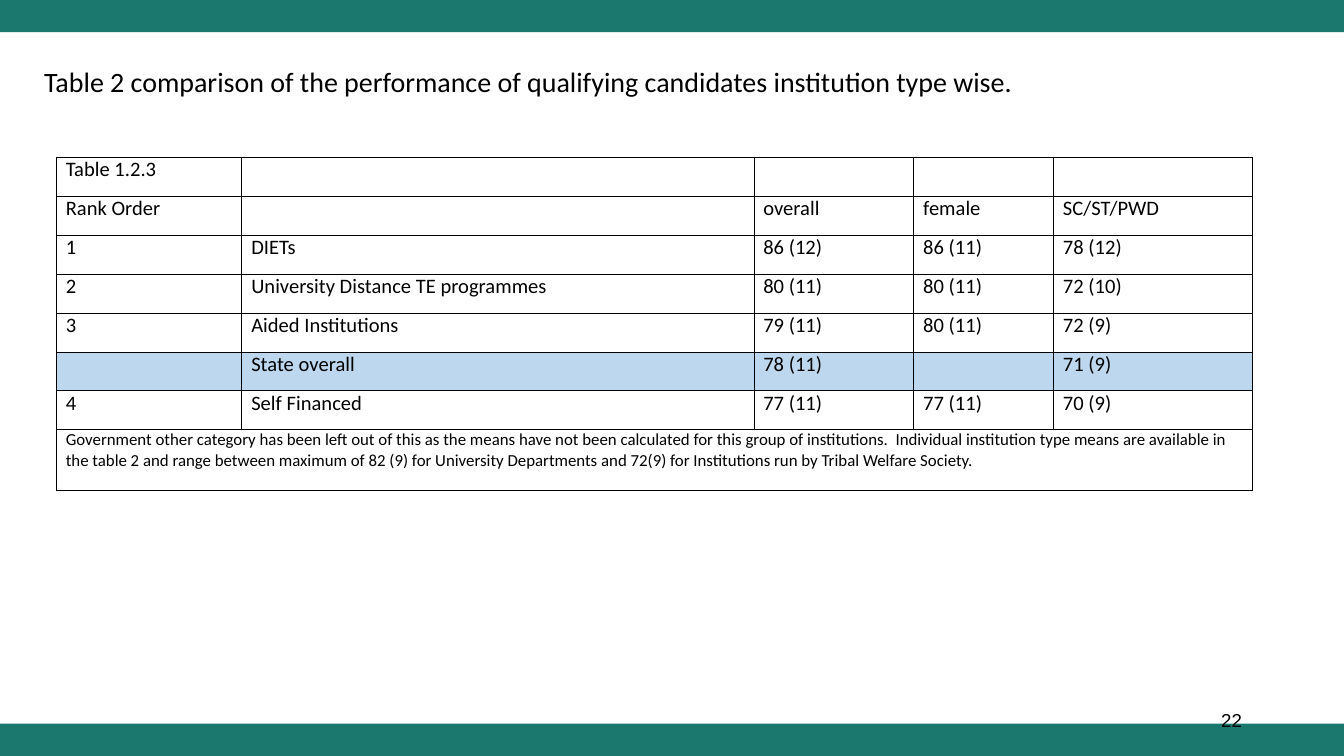
import pptx
import pptx.util
import pptx.dml.color
import pptx.enum.shapes
import pptx.enum.text
import pptx.oxml.ns
import lxml.etree

WIDTH = 10
HEIGHT = WIDTH * 9 / 16
BAND_HEIGHT = 0.24
COLUMNS = [1.38, 3.81, 1.19, 1.04, 1.48]
ROW_HEIGHT, NOTE_HEIGHT = 0.29, 0.45
COLORS = {"band": "1B786E", "text": "000000", "line": "000000", "highlight": "BDD7EE"}

TITLE = "Table 2 comparison of the performance of qualifying candidates institution type wise."
ROWS = [
    ["Table 1.2.3", "", "", "", ""],
    ["Rank Order", "", "overall", "female", "SC/ST/PWD"],
    ["1", "DIETs", "86 (12)", "86 (11)", "78 (12)"],
    ["2", "University Distance TE programmes", "80 (11)", "80 (11)", "72 (10)"],
    ["3", "Aided Institutions", "79 (11)", "80 (11)", "72 (9)"],
    ["", "State overall", "78 (11)", "", "71 (9)"],
    ["4", "Self Financed", "77 (11)", "77 (11)", "70 (9)"],
]
HIGHLIGHT_ROW = 5
NOTE = (
    "Government other category has been left out of this as the means have not been "
    "calculated for this group of institutions.  Individual institution type means are "
    "available in the table 2 and range between maximum of 82 (9) for University "
    "Departments and 72(9) for Institutions run by Tribal Welfare Society."
)


def color(name):
    return pptx.dml.color.RGBColor.from_string(COLORS[name])


def inches(box):
    return [pptx.util.Inches(length) for length in box]


def write(para, text, size=11, font="Calibri", align=None):
    if align is not None:
        para.alignment = align
    if not text:
        # An empty paragraph takes its line height from its end mark.
        end_mark = lxml.etree.SubElement(para._p, pptx.oxml.ns.qn("a:endParaRPr"))
        end_mark.set("sz", str(size * 100))
        return
    span = para.add_run()
    span.text = text
    span.font.size = pptx.util.Pt(size)
    span.font.name = font
    span.font.color.rgb = color("text")


def set_margins(target, across, down):
    target.margin_left = target.margin_right = pptx.util.Inches(across)
    target.margin_top = target.margin_bottom = pptx.util.Inches(down)


def add_band(page, box):
    band = page.shapes.add_shape(pptx.enum.shapes.MSO_SHAPE.RECTANGLE, *inches(box))
    band.shadow.inherit = False
    band.fill.solid()
    band.fill.fore_color.rgb = color("band")
    band.line.fill.background()


def add_text(page, box, text, margins, anchor, **text_format):
    frame = page.shapes.add_textbox(*inches(box)).text_frame
    frame.word_wrap = True
    frame.vertical_anchor = anchor
    set_margins(frame, *margins)
    para = frame.paragraphs[0]
    write(para, text, **text_format)
    return para


def add_title(page, box):
    para = add_text(page, box, TITLE, (0.1, 0.1), pptx.enum.text.MSO_ANCHOR.TOP, size=15)
    para.line_spacing = 1.08
    para.space_after = pptx.util.Pt(8)


def add_page_number(page, box):
    add_text(page, box, "22", (0.07, 0.04), pptx.enum.text.MSO_ANCHOR.MIDDLE,
             size=10, font="Arial", align=pptx.enum.text.PP_ALIGN.RIGHT)


def draw_borders(cell):
    properties = cell._tc.get_or_add_tcPr()
    for side in ("lnL", "lnR", "lnT", "lnB"):
        line = lxml.etree.SubElement(properties, pptx.oxml.ns.qn(f"a:{side}"))
        line.set("w", str(pptx.util.Pt(0.5)))
        fill = lxml.etree.SubElement(line, pptx.oxml.ns.qn("a:solidFill"))
        lxml.etree.SubElement(fill, pptx.oxml.ns.qn("a:srgbClr")).set("val", COLORS["line"])


def add_results_table(page, left, top):
    heights = [ROW_HEIGHT] * len(ROWS) + [NOTE_HEIGHT]
    box = inches([left, top, sum(COLUMNS), sum(heights)])
    table = page.shapes.add_table(len(heights), len(COLUMNS), *box).table
    table.first_row = table.horz_banding = False
    for column, width in zip(table.columns, COLUMNS):
        column.width = pptx.util.Inches(width)
    for row, height in zip(table.rows, heights):
        row.height = pptx.util.Inches(height)

    note_row = [NOTE] + [""] * (len(COLUMNS) - 1)
    for row_index, texts in enumerate(ROWS + [note_row]):
        for column_index, text in enumerate(texts):
            cell = table.cell(row_index, column_index)
            set_margins(cell, 0.07, 0)
            draw_borders(cell)
            if row_index == HIGHLIGHT_ROW:
                cell.fill.solid()
                cell.fill.fore_color.rgb = color("highlight")
            else:
                cell.fill.background()
            size = 9 if row_index == len(ROWS) else 11
            write(cell.text_frame.paragraphs[0], text, size=size)
    table.cell(len(ROWS), 0).merge(table.cell(len(ROWS), len(COLUMNS) - 1))


def main():
    deck = pptx.Presentation()
    deck.slide_width, deck.slide_height = inches([WIDTH, HEIGHT])
    page = deck.slides.add_slide(deck.slide_layouts[6])
    for top in (HEIGHT - BAND_HEIGHT, 0):
        add_band(page, [0, top, WIDTH, BAND_HEIGHT])
    add_page_number(page, [7.06, 5.21, 2.25, 0.3])
    add_results_table(page, 0.42, 1.17)
    add_title(page, [0.23, 0.36, 9.53, 0.45])
    deck.save("out.pptx")


if __name__ == "__main__":
    main()
